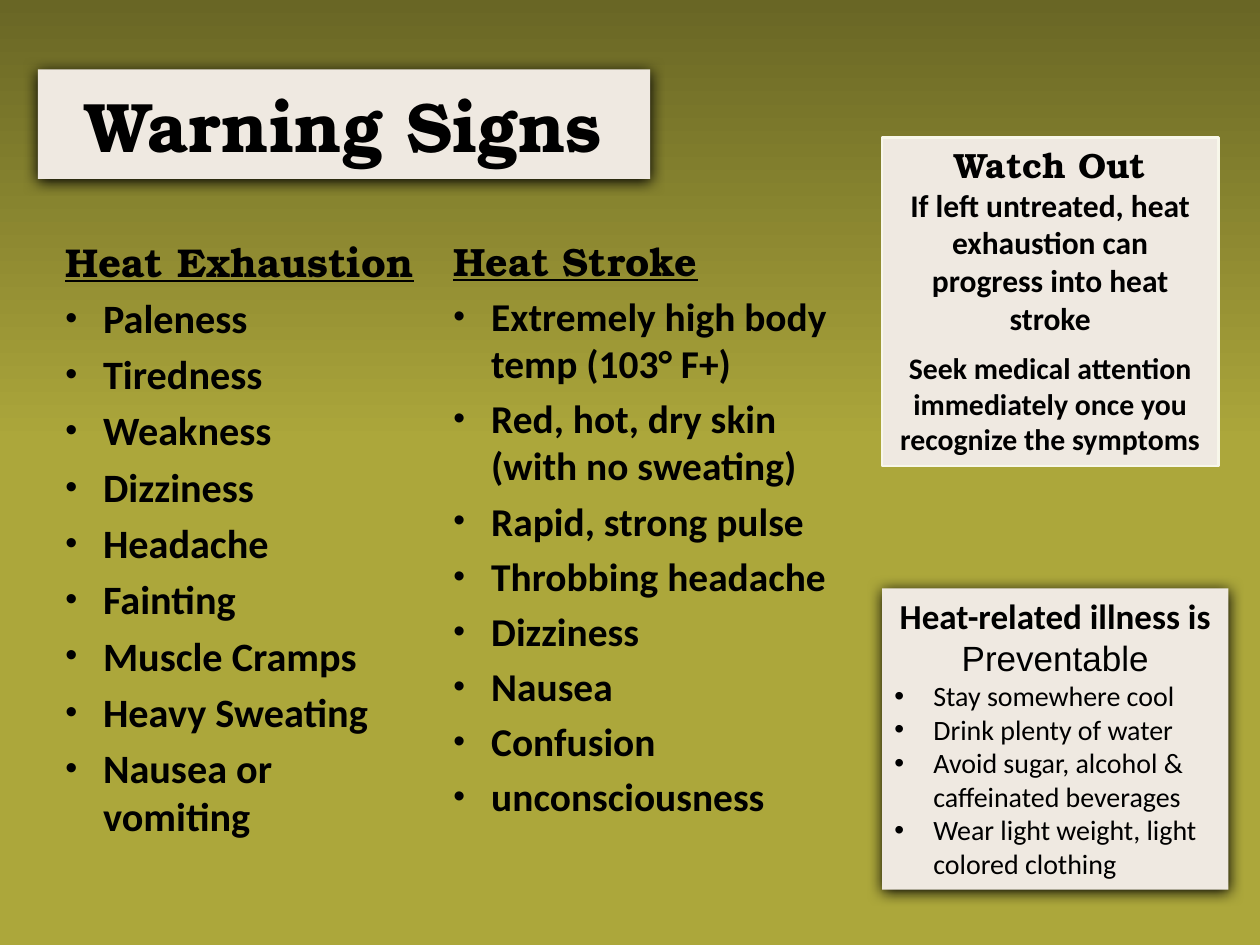
import copy
from dataclasses import dataclass

import pptx
import pptx.dml.color
import pptx.enum.shapes
import pptx.enum.text
import pptx.oxml.ns
import pptx.util
from lxml import etree
from pptx.util import Inches

SERIF = "TeX Gyre Bonum"
SANS = "Calibri"
BLACK = "000000"
CREAM = "EFE9E1"
OLIVE = "ACA73B"
DARK_OLIVE = "696625"
ALIGN = pptx.enum.text.PP_ALIGN
ANCHOR = pptx.enum.text.MSO_ANCHOR
AUTO_SIZE = pptx.enum.text.MSO_AUTO_SIZE
qn = pptx.oxml.ns.qn


@dataclass
class Line:
    text: str
    size: float
    font: str = SANS
    bold: bool = True
    underline: bool = False
    align: ALIGN = ALIGN.CENTER
    before: float = 0
    indent: float = 0
    bullet_size: int = 100


@dataclass
class SymptomColumn:
    heading: str
    left: float
    width: float
    height: float
    size: float
    symptoms: list[str]


@dataclass
class Panel:
    left: float
    top: float
    width: float
    height: float
    lines: list[Line]
    border: str | None = None


def rgb(value: str) -> pptx.dml.color.RGBColor:
    return pptx.dml.color.RGBColor.from_string(value)


def add_bullet(paragraph, indent: float, size: int) -> None:
    properties = paragraph._p.get_or_add_pPr()
    properties.set("marL", str(Inches(indent)))
    properties.set("indent", str(-Inches(indent)))
    color = etree.SubElement(properties, qn("a:buClr"))
    etree.SubElement(color, qn("a:srgbClr"), val=BLACK)
    etree.SubElement(properties, qn("a:buSzPct"), val=str(size * 1000))
    etree.SubElement(properties, qn("a:buFont"), typeface="Arial")
    etree.SubElement(properties, qn("a:buChar"), char="•")


def write_lines(shape, lines: list[Line], anchor=ANCHOR.TOP, auto_size=AUTO_SIZE.NONE) -> None:
    frame = shape.text_frame
    frame.word_wrap = True
    frame.auto_size = auto_size
    frame.vertical_anchor = anchor
    for index, line in enumerate(lines):
        paragraph = frame.paragraphs[0] if index == 0 else frame.add_paragraph()
        paragraph.text = line.text
        paragraph.alignment = line.align
        paragraph.space_before = pptx.util.Pt(line.before)
        if line.indent:
            add_bullet(paragraph, line.indent, line.bullet_size)
        font = paragraph.font
        font.name = line.font
        font.size = pptx.util.Pt(line.size)
        font.bold = line.bold
        font.underline = line.underline
        font.color.rgb = rgb(BLACK)


def style_card(shape, border: str | None = None) -> None:
    shape.fill.solid()
    shape.fill.fore_color.rgb = rgb(CREAM)
    shape.shadow.inherit = False
    if border:
        shape.line.color.rgb = rgb(border)
        shape.line.width = pptx.util.Pt(1.5)
        return
    shape.line.fill.background()
    effects = shape._element.spPr.find(qn("a:effectLst"))
    shadow = etree.SubElement(
        effects, qn("a:outerShdw"), blurRad=str(pptx.util.Pt(8.5)),
        dist=str(pptx.util.Pt(1)), dir="5400000", algn="t", rotWithShape="0")
    etree.SubElement(shadow, qn("a:srgbClr"), val=BLACK)


def paint_background(slide) -> None:
    fill = slide.background.fill
    fill.gradient()
    fill.gradient_angle = 90
    first = fill.gradient_stops[0]
    first.color.rgb = rgb(OLIVE)
    first.position = 0
    last = fill.gradient_stops[1]
    last.color.rgb = rgb(DARK_OLIVE)
    last.position = 1
    first._gs.addnext(copy.deepcopy(first._gs))
    fill.gradient_stops[1].position = 0.53


def add_title(slide, text: str) -> None:
    title = slide.shapes.title
    title.left, title.top = Inches(0.3), Inches(0.55)
    title.width, title.height = Inches(4.86), Inches(0.87)
    style_card(title)
    write_lines(title, [Line(text, 40, SERIF)], ANCHOR.MIDDLE)


def add_column(slide, column: SymptomColumn) -> None:
    box = slide.shapes.add_textbox(
        Inches(column.left), Inches(1.83), Inches(column.width), Inches(column.height))
    before = column.size * 0.2
    heading = Line(column.heading, column.size, SERIF, underline=True, align=ALIGN.LEFT, before=before)
    symptoms = [
        Line(symptom, column.size, align=ALIGN.LEFT, before=before, indent=0.3, bullet_size=85)
        for symptom in column.symptoms
    ]
    write_lines(box, [heading, *symptoms])


def add_panel(slide, panel: Panel) -> None:
    shape = slide.shapes.add_shape(
        pptx.enum.shapes.MSO_SHAPE.RECTANGLE, Inches(panel.left), Inches(panel.top),
        Inches(panel.width), Inches(panel.height))
    style_card(shape, panel.border)
    write_lines(shape, panel.lines, auto_size=AUTO_SIZE.SHAPE_TO_FIT_TEXT)


COLUMNS = [
    SymptomColumn("Heat Exhaustion", 0.42, 3, 5.08, 23, [
        "Paleness", "Tiredness", "Weakness", "Dizziness", "Headache", "Fainting",
        "Muscle Cramps", "Heavy Sweating", "Nausea or vomiting",
    ]),
    SymptomColumn("Heat Stroke", 3.5, 3.25, 5.17, 22.5, [
        "Extremely high body temp (103° F+)", "Red, hot, dry skin (with no sweating)",
        "Rapid, strong pulse", "Throbbing headache", "Dizziness", "Nausea",
        "Confusion", "unconsciousness",
    ]),
]

PREVENTION_TIPS = [
    "Stay somewhere cool",
    "Drink plenty of water",
    "Avoid sugar, alcohol & caffeinated beverages",
    "Wear light weight, light colored clothing",
]

PANELS = [
    Panel(7, 4.67, 2.75, 2.39, [
        Line("Heat-related illness is", 20),
        Line("Preventable", 20, "Arial", bold=False),
        *[Line(tip, 16, bold=False, align=ALIGN.LEFT, indent=0.31) for tip in PREVENTION_TIPS],
    ]),
    Panel(7, 1.09, 2.67, 2.61, [
        Line("Watch Out", 20, SERIF),
        Line("If left untreated, heat exhaustion can progress into heat stroke", 18),
        Line("Seek medical attention immediately once you recognize the symptoms", 17, before=7.3),
    ], border="F8F7EA"),
]


def main() -> None:
    presentation = pptx.Presentation()
    presentation.slide_width = Inches(10)
    presentation.slide_height = Inches(7.5)
    slide = presentation.slides.add_slide(presentation.slide_layouts[5])
    paint_background(slide)
    add_title(slide, "Warning Signs")
    for column in COLUMNS:
        add_column(slide, column)
    for panel in PANELS:
        add_panel(slide, panel)
    presentation.save("out.pptx")


if __name__ == "__main__":
    main()
